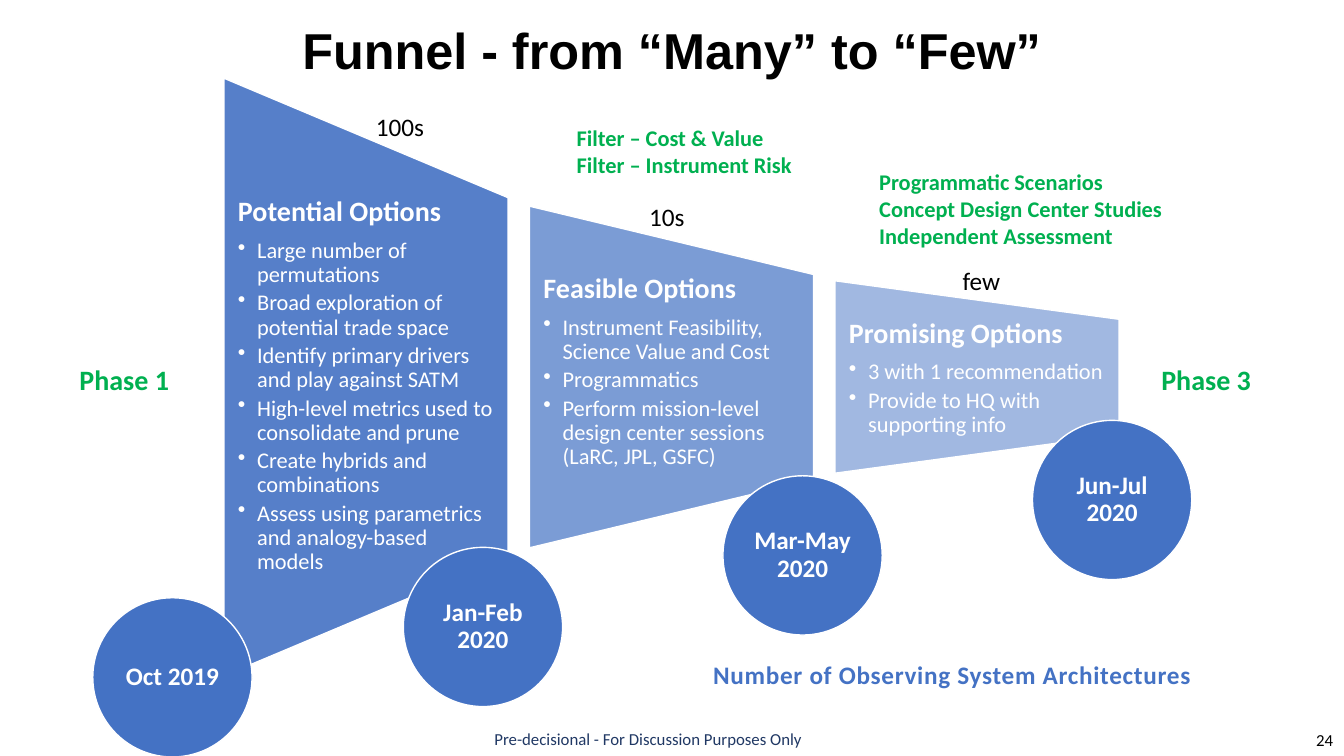
"""Build the funnel slide that narrows many options to a few."""
from dataclasses import dataclass

from lxml.etree import SubElement
from pptx import Presentation
from pptx.dml.color import RGBColor as RGB
from pptx.enum.shapes import MSO_SHAPE as SHAPE
from pptx.enum.text import MSO_ANCHOR as ANCHOR, PP_ALIGN as ALIGN
from pptx.oxml.ns import qn
from pptx.util import Emu, Pt


@dataclass(frozen=True)
class Theme:
    """Colours, fonts and type sizes of the slide."""
    blue: str = "4472C4"
    navy: str = "203864"
    green: str = "00B050"
    black: str = "000000"
    white: str = "FFFFFF"
    title_font: str = "Arial"
    body_font: str = "Calibri"
    title: int = 36
    heading: int = 20
    label: int = 18
    body: int = 16
    small: int = 12


T = Theme()
EMU_PER_PX = 9144
SLIDE_W, SLIDE_H = 1333, 750
PANEL_X, PANEL_W, PANEL_STEP, PANEL_MID = 222, 282, 303, 374
TEXT_SHARE = 0.6
CIRCLE = 158

PANELS = [
    (593, 90, "Potential Options", [
        "Large number of permutations",
        "Broad exploration of potential trade space",
        "Identify primary drivers and play against SATM",
        "High-level metrics used to consolidate and prune",
        "Create hybrids and combinations",
        "Assess using parametrics and analogy-based models"]),
    (339, 70, "Feasible Options", [
        "Instrument Feasibility, Science Value and Cost",
        "Programmatics",
        "Perform mission-level design center sessions (LaRC, JPL, GSFC)"]),
    (191, 50, "Promising Options", [
        "3 with 1 recommendation",
        "Provide to HQ with supporting info"]),
]
COUNTS = [("100s", 363, 106), ("10s", 634, 195), ("few", 945, 258)]
PHASES = [("Phase 1", 69), ("Phase 3", 1142)]
FILTERS = [
    ("Filter – Cost & Value\nFilter – Instrument Risk", (512, 118, 286, 118)),
    ("Programmatic Scenarios\nConcept Design Center Studies\nIndependent Assessment",
     (812, 162, 355, 145)),
]
DATES = [("Jun-Jul 2020", 1024, 417), ("Mar-May 2020", 717, 472),
         ("Jan-Feb 2020", 400, 543), ("Oct 2019", 92, 593)]


def px(n):
    """Turn pixels into EMU."""
    return Emu(round(n * EMU_PER_PX))


def box(x, y, w, h):
    """Return a position and size in EMU."""
    return px(x), px(y), px(w), px(h)


def set_insets(tf, left, top, right, bottom):
    """Set the four margins of a text frame."""
    tf.margin_left, tf.margin_top = px(left), px(top)
    tf.margin_right, tf.margin_bottom = px(right), px(bottom)


def style(p, size, color, bold=False, align=ALIGN.LEFT, font=T.body_font):
    """Format a paragraph and its runs."""
    p.alignment = align
    for r in p.runs:
        r.font.name, r.font.size, r.font.bold = font, Pt(size), bold
        r.font.color.rgb = RGB.from_string(color)


def add_bullet(p):
    """Give a paragraph a hanging bullet."""
    p.level = 1
    pPr = p._p.get_or_add_pPr()
    pPr.set("marL", str(px(19)))
    pPr.set("indent", str(px(-19)))
    SubElement(pPr, qn("a:buChar"), char="•")


def add_label(s, text, area, size, color, bold=False, align=ALIGN.LEFT,
              insets=(10, 5, 10, 5)):
    """Add a text box with one format throughout."""
    sp = s.shapes.add_textbox(*box(*area))
    tf = sp.text_frame
    tf.word_wrap = True
    set_insets(tf, *insets)
    tf.text = text
    for p in tf.paragraphs:
        style(p, size, color, bold, align)
    return sp


def add_blue_shape(s, kind, area):
    """Add a blue shape with a thin white outline."""
    sp = s.shapes.add_shape(kind, *box(*area))
    sp.shadow.inherit = False
    sp.fill.solid()
    sp.fill.fore_color.rgb = RGB.from_string(T.blue)
    sp.line.color.rgb = RGB.from_string(T.white)
    sp.line.width = Pt(1)
    return sp


def add_panel(s, index, height, opacity, heading, bullets):
    """Add one funnel section with its heading and bullets."""
    x = PANEL_X + index * PANEL_STEP
    sp = add_blue_shape(s, SHAPE.FLOWCHART_MANUAL_OPERATION,
                        (x + (PANEL_W - height) / 2, PANEL_MID - PANEL_W / 2,
                         height, PANEL_W))
    sp.rotation = 270
    color = sp._element.spPr.find(qn("a:solidFill")).find(qn("a:srgbClr"))
    SubElement(color, qn("a:alpha"), val=str(opacity * 1000))

    text_h = height * TEXT_SHARE
    text = add_label(s, "\n".join([heading, *bullets]),
                     (x, PANEL_MID - text_h / 2, PANEL_W, text_h),
                     T.body, T.white, insets=(14, 0, 14, 0))
    first, *rest = text.text_frame.paragraphs
    style(first, T.heading, T.white, bold=True)
    first.line_spacing, first.space_after = 0.9, Pt(8)
    for p in rest:
        p.line_spacing, p.space_after = 0.9, Pt(3)
        add_bullet(p)


def add_date(s, text, x, y):
    """Add a milestone circle."""
    sp = add_blue_shape(s, SHAPE.OVAL, (x, y, CIRCLE, CIRCLE))
    tf = sp.text_frame
    tf.word_wrap, tf.vertical_anchor = True, ANCHOR.MIDDLE
    set_insets(tf, 3, 3, 3, 3)
    tf.text = text
    p = tf.paragraphs[0]
    p.line_spacing = 0.9
    style(p, T.label, T.white, True, ALIGN.CENTER)


def add_title(s, text):
    """Fill and place the title placeholder."""
    sp = s.shapes.title
    sp.left, sp.top, sp.width, sp.height = box(222, 2, 889, 93)
    tf = sp.text_frame
    tf.text = text
    tf.vertical_anchor = ANCHOR.MIDDLE
    style(tf.paragraphs[0], T.title, T.black, True, ALIGN.CENTER, T.title_font)


def main():
    """Build and save the slide."""
    prs = Presentation()
    prs.slide_width, prs.slide_height = px(SLIDE_W), px(SLIDE_H)
    s = prs.slides.add_slide(prs.slide_layouts[5])
    add_title(s, "Funnel - from “Many” to “Few”")
    for i, panel in enumerate(PANELS):
        add_panel(s, i, *panel)
    for text, x, y in COUNTS:
        add_label(s, text, (x, y, 116, 42), T.label, T.black)
    for text, x in PHASES:
        add_label(s, text, (x, 355, 116, 44), T.heading, T.green, True)
    for text, area in FILTERS:
        add_label(s, text, area, T.body, T.green, True, insets=(60, 5, 0, 5))
    caption = add_label(s, "Number of Observing System Architectures",
                        (682, 649, 525, 42), T.label, T.blue, True, ALIGN.CENTER)
    caption.text_frame.paragraphs[0].runs[0].font._element.set("spc", "50")
    for date in DATES:
        add_date(s, *date)
    add_label(s, "Pre-decisional - For Discussion Purposes Only",
              (418, 718, 450, 40), T.small, T.navy, align=ALIGN.CENTER)
    add_label(s, "24", (1032, 719, 300, 40), T.small, T.black, align=ALIGN.RIGHT)
    prs.save("out.pptx")


if __name__ == "__main__":
    main()
